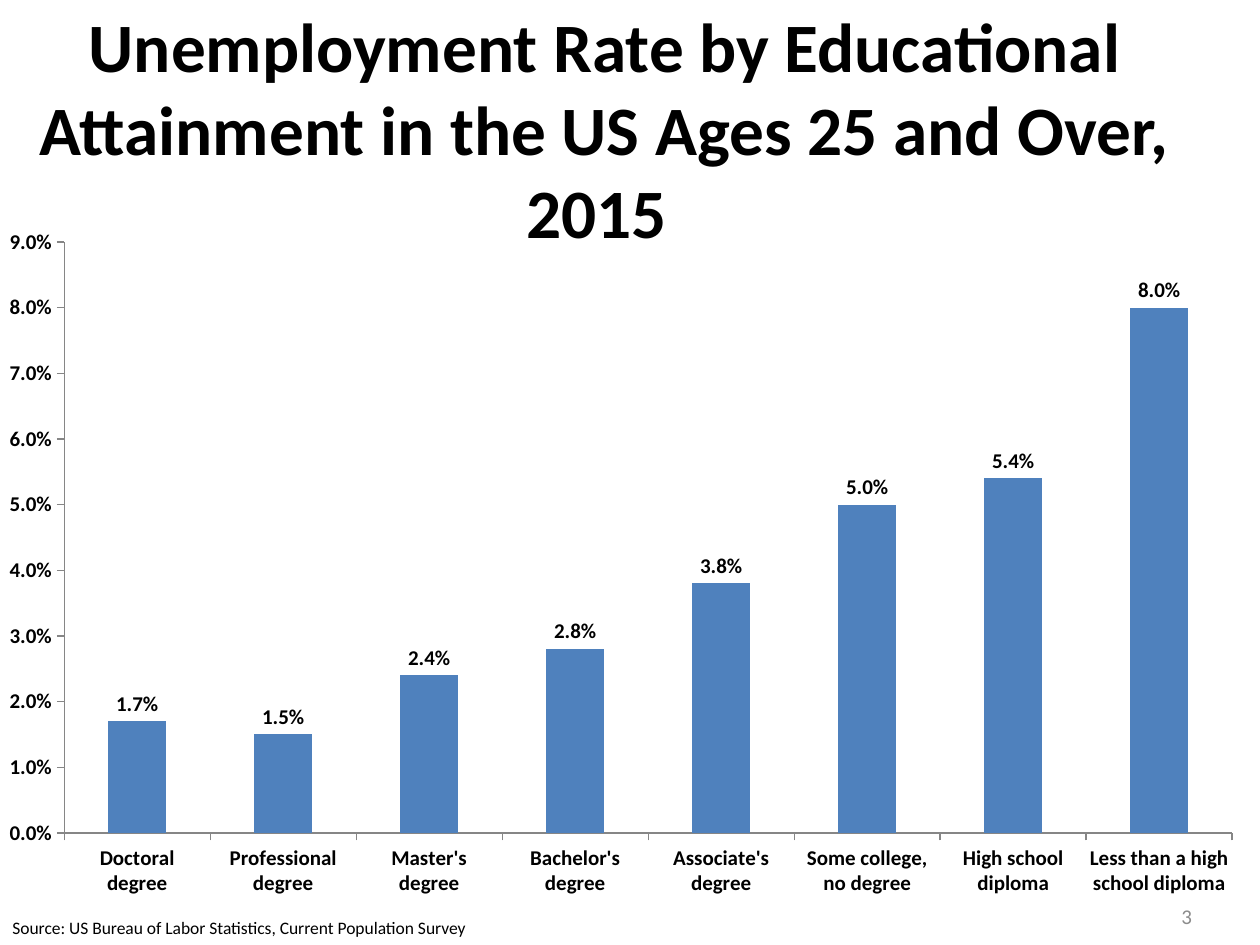
from dataclasses import dataclass

from lxml import etree
from pptx import Presentation
from pptx.chart.data import CategoryChartData
from pptx.dml.color import RGBColor
from pptx.enum.chart import XL_CHART_TYPE, XL_LABEL_POSITION, XL_TICK_MARK
from pptx.enum.text import MSO_ANCHOR, MSO_AUTO_SIZE, PP_ALIGN
from pptx.util import Inches, Pt

COLUMNS = XL_CHART_TYPE.COLUMN_CLUSTERED
OUTSIDE_END = XL_LABEL_POSITION.OUTSIDE_END
TICK_OUT, TICK_NONE = XL_TICK_MARK.OUTSIDE, XL_TICK_MARK.NONE
TOP, MIDDLE = MSO_ANCHOR.TOP, MSO_ANCHOR.MIDDLE
LEFT, CENTER, RIGHT = PP_ALIGN.LEFT, PP_ALIGN.CENTER, PP_ALIGN.RIGHT
FIXED_SIZE = MSO_AUTO_SIZE.NONE
TITLE_ONLY = 5
PERCENT = "0.0%"
CHART_NS = "http://schemas.openxmlformats.org/drawingml/2006/chart"

UNEMPLOYMENT = {
    "Doctoral degree": 0.017,
    "Professional degree": 0.015,
    "Master's degree": 0.024,
    "Bachelor's degree": 0.028,
    "Associate's degree": 0.038,
    "Some college, no degree": 0.05,
    "High school diploma": 0.054,
    "Less than a high school diploma": 0.08,
}


@dataclass(frozen=True)
class Theme:
    font: str = "Calibri"
    ink: str = "000000"
    muted: str = "8C8C8C"
    axis: str = "868686"
    bar: str = "4F81BD"
    title_size: float = 39.6
    label_size: float = 12
    source_size: float = 10


class SlideBuilder:
    def __init__(self, deck, theme):
        self.deck = deck
        self.theme = theme
        self.page = deck.slides.add_slide(deck.slide_layouts[TITLE_ONLY])

    def area(self, left, top, width, height):
        across, down = self.deck.slide_width, self.deck.slide_height
        return (round(left * across), round(top * down),
                round(width * across), round(height * down))

    def style(self, font, size, color, bold=False):
        font.name = self.theme.font
        font.size = Pt(size)
        font.bold = bold
        font.color.rgb = RGBColor.from_string(color)

    def set_text(self, box, words, size, color, align, anchor, bold=False, wrap=True):
        frame = box.text_frame
        frame.text = words
        frame.auto_size = FIXED_SIZE
        frame.word_wrap = wrap
        frame.vertical_anchor = anchor
        para = frame.paragraphs[0]
        para.alignment = align
        self.style(para.font, size, color, bold)

    def title(self, words, share):
        box = self.page.shapes.title
        box.left, box.top, box.width, box.height = self.area(*share)
        self.set_text(box, words, self.theme.title_size, self.theme.ink,
                      CENTER, MIDDLE, bold=True)

    def text(self, words, share, size, color, align=LEFT, anchor=TOP, wrap=True):
        box = self.page.shapes.add_textbox(*self.area(*share))
        self.set_text(box, words, size, color, align, anchor, wrap=wrap)

    def axis(self, axis):
        axis.has_major_gridlines = False
        axis.major_tick_mark = TICK_OUT
        axis.minor_tick_mark = TICK_NONE
        axis.format.line.color.rgb = RGBColor.from_string(self.theme.axis)
        axis.format.line.width = Pt(0.75)
        self.style(axis.tick_labels.font, self.theme.label_size, self.theme.ink, True)

    def place_plot(self, chart, left, top, width, height):
        area = chart.plots[0]._element.getparent()
        for old in area.findall(f"{{{CHART_NS}}}layout"):
            area.remove(old)
        layout = etree.Element(f"{{{CHART_NS}}}layout")
        manual = etree.SubElement(layout, f"{{{CHART_NS}}}manualLayout")
        settings = {"layoutTarget": "inner", "xMode": "edge", "yMode": "edge",
                    "x": left, "y": top, "w": width, "h": height}
        for tag, value in settings.items():
            etree.SubElement(manual, f"{{{CHART_NS}}}{tag}", val=str(value))
        area.insert(0, layout)

    def column_chart(self, values, share, plot_share, top_value, step):
        data = CategoryChartData(number_format=PERCENT)
        data.categories = list(values)
        data.add_series("Series 1", list(values.values()))
        chart = self.page.shapes.add_chart(COLUMNS, *self.area(*share), data).chart
        chart.has_title = False
        chart.has_legend = False
        self.style(chart.font, self.theme.source_size, self.theme.ink)
        self.axis(chart.category_axis)
        scale = chart.value_axis
        self.axis(scale)
        scale.minimum_scale, scale.maximum_scale = 0, top_value
        scale.major_unit = step
        scale.tick_labels.number_format = PERCENT
        scale.tick_labels.number_format_is_linked = False

        plot = chart.plots[0]
        plot.gap_width = 150
        plot.vary_by_categories = False
        series = plot.series[0]
        series.format.fill.solid()
        series.format.fill.fore_color.rgb = RGBColor.from_string(self.theme.bar)
        labels = series.data_labels
        labels.show_value = True
        labels.number_format = PERCENT
        labels.number_format_is_linked = False
        labels.position = OUTSIDE_END
        self.style(labels.font, self.theme.label_size, self.theme.ink, True)
        self.place_plot(chart, *plot_share)


def main():
    deck = Presentation()
    deck.slide_width, deck.slide_height = Inches(10), Inches(7.5)
    theme = Theme()
    slide = SlideBuilder(deck, theme)
    slide.title("Unemployment Rate by Educational Attainment in the US "
                "Ages 25 and Over, 2015 ", (-0.031, 0.052, 1.022, 0.167))
    slide.column_chart(UNEMPLOYMENT, (0, 0.235, 1, 0.729),
                       (0.051, 0.029, 0.927, 0.858), top_value=0.09, step=0.01)
    slide.text("Source: US Bureau of Labor Statistics, Current Population Survey",
               (0, 0.964, 0.386, 0.076), theme.source_size, theme.ink, wrap=False)
    slide.text("3", (0.723, 0.943, 0.233, 0.053), theme.label_size, theme.muted,
               RIGHT, MIDDLE)
    deck.save("out.pptx")


if __name__ == "__main__":
    main()
